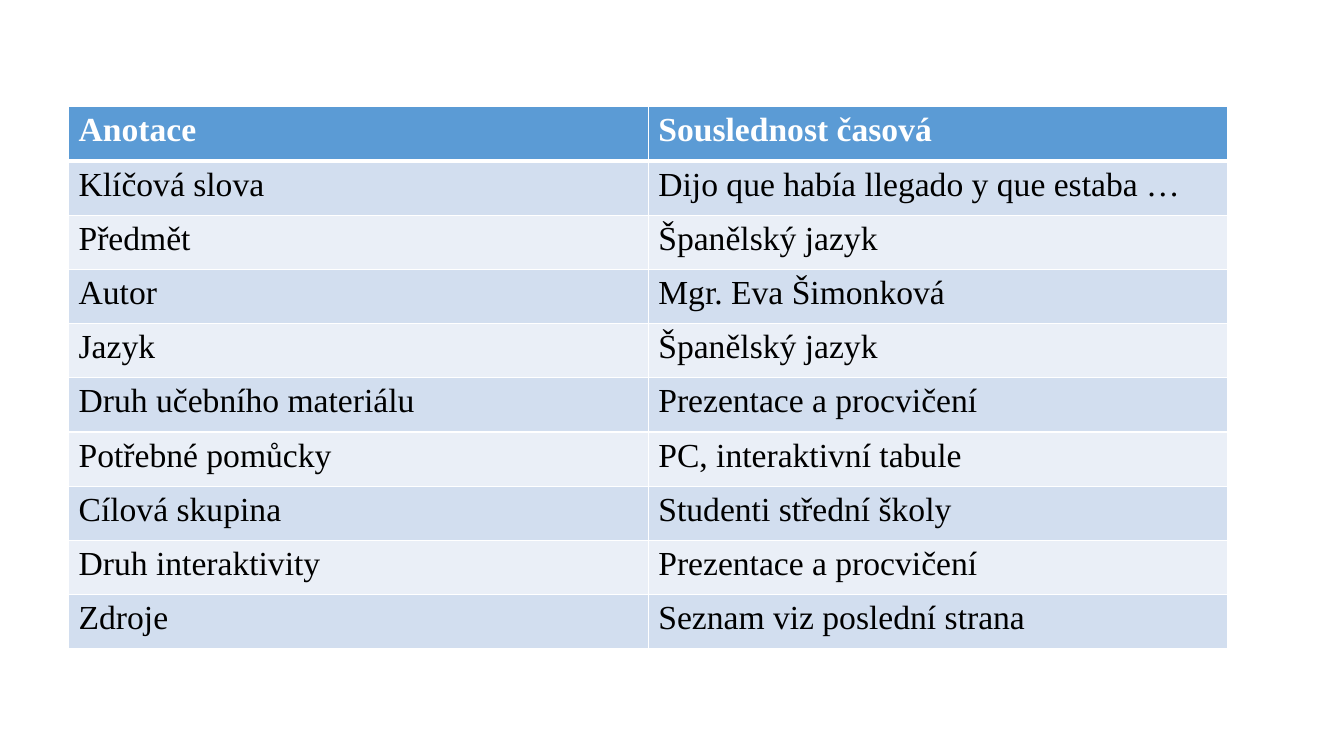
from pptx import Presentation
from pptx.dml.color import RGBColor as Rgb
from pptx.oxml.ns import qn
from pptx.util import Inches, Pt
from lxml.etree import SubElement as Sub

WHITE = Rgb(0xFF, 0xFF, 0xFF)
BLACK = Rgb(0, 0, 0)
BLUE = Rgb(0x5B, 0x9B, 0xD5)
BANDS = [Rgb(0xEA, 0xEF, 0xF7), Rgb(0xD2, 0xDE, 0xEF)]

ROWS = [
    ("Anotace", "Souslednost časová"),
    ("Klíčová slova", "Dijo que había llegado y que estaba …"),
    ("Předmět", "Španělský jazyk"),
    ("Autor", "Mgr. Eva Šimonková"),
    ("Jazyk", "Španělský jazyk"),
    ("Druh učebního materiálu", "Prezentace a procvičení"),
    ("Potřebné pomůcky", "PC, interaktivní tabule"),
    ("Cílová skupina", "Studenti střední školy"),
    ("Druh interaktivity", "Prezentace a procvičení"),
    ("Zdroje", "Seznam viz poslední strana"),
]


def set_edges(cell, widths):
    """Draw white cell borders; widths maps a side to points."""
    props = cell._tc.get_or_add_tcPr()
    for side, width in widths.items():
        line = Sub(props, qn(f"a:ln{side}"), w=str(Pt(width)))
        fill = Sub(line, qn("a:solidFill"))
        Sub(fill, qn("a:srgbClr"), val=str(WHITE))


def fill_cell(cell, text, row):
    head = row == 0
    # Borders come before the fill in the cell properties
    set_edges(cell, {"L": 1, "R": 1, "T": 3 if row == 1 else 1, "B": 3 if head else 1})
    cell.fill.solid()
    cell.fill.fore_color.rgb = BLUE if head else BANDS[row % 2]

    # Text
    cell.text = text
    font = cell.text_frame.paragraphs[0].runs[0].font
    style = {"name": "Times New Roman", "size": Pt(24), "bold": head}
    for key, value in style.items():
        setattr(font, key, value)
    font.color.rgb = WHITE if head else BLACK


def add_grid(slide, rows):
    frame = slide.shapes.add_table(
        len(rows), 2, Inches(0.68), Inches(1.06), Inches(11.5), Inches(5.38))
    for r, texts in enumerate(rows):
        for c, text in enumerate(texts):
            fill_cell(frame.table.cell(r, c), text, r)


def main():
    deck = Presentation()
    deck.slide_width, deck.slide_height = Inches(13.33), Inches(7.5)
    # Blank layout: the slide has no title
    slide = deck.slides.add_slide(deck.slide_layouts[6])
    add_grid(slide, ROWS)
    deck.save("out.pptx")


if __name__ == "__main__":
    main()
